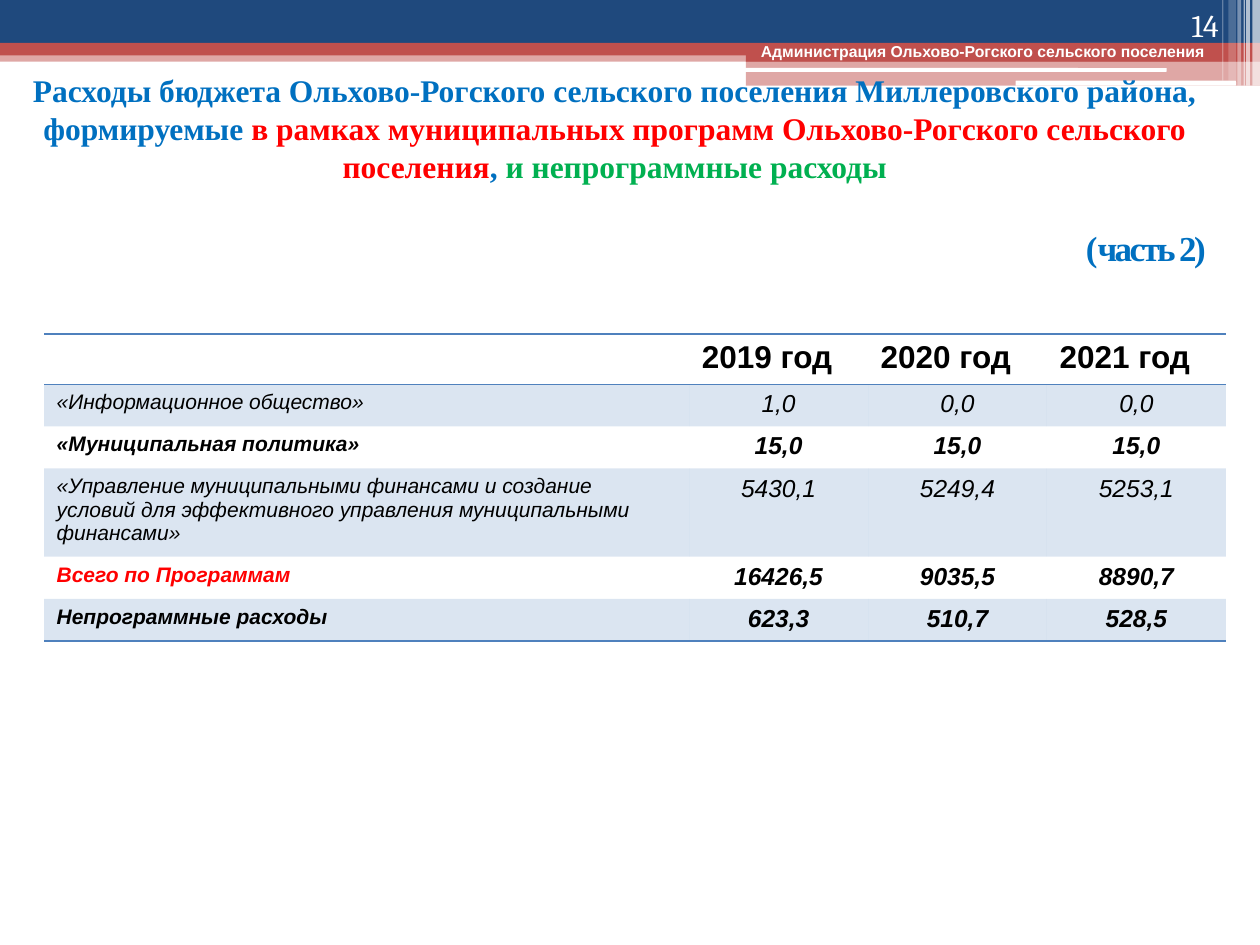
from lxml import etree
from pptx import Presentation
from pptx.dml.color import RGBColor
from pptx.enum.shapes import MSO_SHAPE
from pptx.enum.text import MSO_ANCHOR, PP_ALIGN
from pptx.oxml.ns import qn
from pptx.util import Inches, Pt

RECT, ROUNDED = MSO_SHAPE.RECTANGLE, MSO_SHAPE.ROUNDED_RECTANGLE
LEFT, CENTER, RIGHT = PP_ALIGN.LEFT, PP_ALIGN.CENTER, PP_ALIGN.RIGHT
TOP, MIDDLE, BOTTOM = MSO_ANCHOR.TOP, MSO_ANCHOR.MIDDLE, MSO_ANCHOR.BOTTOM
NAVY, BRICK, WHITE, BLACK = "1F497D", "C0504D", "FFFFFF", "000000"
STEEL, BLUE, RED, GREEN = "4F81BD", "0070C0", "FF0000", "00B050"
NO_TABLE_STYLE = "{2D5ABB26-0587-4C30-8999-92F81FD0307C}"

# left, top, width, height, shape, colour, opacity in percent
BANDS = [
    (0, 0.4, 10, 0.09, RECT, BRICK, 50),
    (0, 0, 10, 0.34, RECT, NAVY, 100),
    (0, 0.34, 10, 0.1, RECT, BRICK, 100),
    (5.92, 0.39, 4.08, 0.1, RECT, BRICK, 100),
    (5.92, 0.48, 4.08, 0.2, RECT, BRICK, 50),
    (5.91, 0.54, 3.35, 0.03, ROUNDED, WHITE, 100),
    (8.06, 0.64, 1.75, 0.04, ROUNDED, WHITE, 100),
]
# left, width, height, opacity in percent
STRIPES = [
    (9.94, 0.06, 0.68, 65), (9.89, 0.03, 0.68, 65), (9.87, 0.01, 0.68, 60),
    (9.82, 0.03, 0.68, 40), (9.75, 0.06, 0.64, 20), (9.7, 0.01, 0.64, 30),
]
TITLE = [
    ("Расходы бюджета Ольхово-Рогского сельского поселения Миллеровского района, формируемые ", BLUE),
    ("в рамках муниципальных программ Ольхово-Рогского сельского поселения", RED),
    (", ", BLUE),
    ("и непрограммные расходы", GREEN),
]
YEARS = ["", "2019 год", "2020 год", "2021 год"]
# label, yearly values, bold, label colour
EXPENSES = [
    ("«Информационное общество»", ["1,0", "0,0", "0,0"], False, BLACK),
    ("«Муниципальная политика»", ["15,0", "15,0", "15,0"], True, BLACK),
    ("«Управление муниципальными финансами и создание условий для эффективного "
     "управления муниципальными финансами»",
     ["5430,1", "5249,4", "5253,1"], False, BLACK),
    ("Всего по Программам", ["16426,5", "9035,5", "8890,7"], True, RED),
    ("Непрограммные расходы", ["623,3", "510,7", "528,5"], True, BLACK),
]
COLUMN_WIDTHS = [5.12, 1.42, 1.42, 1.42]
TABLE_HEIGHT = 2.43
MIN_ROW_HEIGHT = 0.16  # rows grow to fit their text


def paint(fill, properties, color, opacity=100):
    """Fill solidly; properties is the XML element that holds the fill."""
    fill.solid()
    fill.fore_color.rgb = RGBColor.from_string(color)
    if opacity < 100:
        tint = properties.find(qn("a:solidFill")).find(qn("a:srgbClr"))
        etree.SubElement(tint, qn("a:alpha"), val=str(opacity * 1000))


def add_band(page, left, top, width, height, kind, color, opacity):
    band = page.shapes.add_shape(kind, *map(Inches, (left, top, width, height)))
    band.shadow.inherit = False
    band.line.fill.background()
    paint(band.fill, band._element.spPr, color, opacity)


def add_span(para, text, size=18, color=BLACK, font="Arial", bold=False,
             italic=False, spacing=0):
    span = para.add_run()
    span.text = text
    span.font.size, span.font.name = Pt(size), font
    span.font.bold, span.font.italic = bold, italic
    span.font.color.rgb = RGBColor.from_string(color)
    if spacing:
        span.font._element.set("spc", str(int(spacing * 100)))


def add_box(page, left, top, width, height, anchor=TOP, align=LEFT):
    """Add a text box and return its frame and first paragraph."""
    box = page.shapes.add_textbox(*map(Inches, (left, top, width, height)))
    frame = box.text_frame
    frame.word_wrap = True
    frame.vertical_anchor = anchor
    frame.paragraphs[0].alignment = align
    return frame, frame.paragraphs[0]


def add_title(page):
    frame, para = add_box(page, 0, 0.68, 9.76, 1.34, MIDDLE, CENTER)
    frame.margin_left = frame.margin_right = Inches(0.19)
    for text, color in TITLE:
        add_span(para, text, color=color, font="Times New Roman", bold=True)
    part = frame.add_paragraph()
    part.alignment = RIGHT
    part.space_before = Pt(24)
    for text, spacing in (("(", 0), ("часть 2)", -1.5)):
        add_span(part, text, size=20, color=BLUE, font="Times New Roman",
                 bold=True, spacing=spacing)


def add_border(cell, side):
    line = etree.Element(qn(f"a:{side}"), w=str(Pt(1)))
    solid = etree.SubElement(line, qn("a:solidFill"))
    etree.SubElement(solid, qn("a:srgbClr"), val=STEEL)
    properties = cell._tc.get_or_add_tcPr()
    position = len(properties.findall(qn("a:lnT")))
    properties.insert(position, line)


def fill_cell(cell, text, align=LEFT, banded=False, borders=(), **style):
    para = cell.text_frame.paragraphs[0]
    para.alignment = align
    if text:
        add_span(para, text, **style)
    if banded:
        paint(cell.fill, cell._tc.get_or_add_tcPr(), STEEL, 20)
    else:
        cell.fill.background()
    for side in borders:
        add_border(cell, side)


def add_expense_table(page):
    area = (0.35, 2.65, sum(COLUMN_WIDTHS), TABLE_HEIGHT)
    frame = page.shapes.add_table(len(EXPENSES) + 1, len(COLUMN_WIDTHS),
                                  *map(Inches, area))
    table = frame.table
    table.first_row = table.horz_banding = False
    table._tbl.tblPr.find(qn("a:tableStyleId")).text = NO_TABLE_STYLE
    for column, width in zip(table.columns, COLUMN_WIDTHS):
        column.width = Inches(width)
    for row in table.rows:
        row.height = Inches(MIN_ROW_HEIGHT)
    frame.height = Inches(TABLE_HEIGHT)

    for column, year in enumerate(YEARS):
        fill_cell(table.cell(0, column), year, borders=("lnT", "lnB"), bold=True)
    for row, (label, values, bold, color) in enumerate(EXPENSES, 1):
        shared = {"banded": row % 2 == 1, "bold": bold, "italic": True,
                  "borders": ("lnB",) if row == len(EXPENSES) else ()}
        fill_cell(table.cell(row, 0), label, size=12, color=color, **shared)
        for column, value in enumerate(values, 1):
            fill_cell(table.cell(row, column), value, CENTER, size=14, **shared)


def main():
    deck = Presentation()
    deck.slide_width, deck.slide_height = Inches(10), Inches(7.5)
    page = deck.slides.add_slide(deck.slide_layouts[6])
    for band in BANDS:
        add_band(page, *band)
    for left, width, height, opacity in STRIPES:
        add_band(page, left, 0, width, height, RECT, WHITE, opacity)

    _, owner = add_box(page, 5.94, 0.28, 3.78, 0.25)
    add_span(owner, "Администрация Ольхово-Рогского сельского поселения",
             size=9, color=WHITE, bold=True)
    add_title(page)
    _, number = add_box(page, 8.94, 0, 0.83, 0.4, BOTTOM, RIGHT)
    add_span(number, "14", color=WHITE, font="Cambria")
    add_expense_table(page)
    deck.save("out.pptx")


if __name__ == "__main__":
    main()
